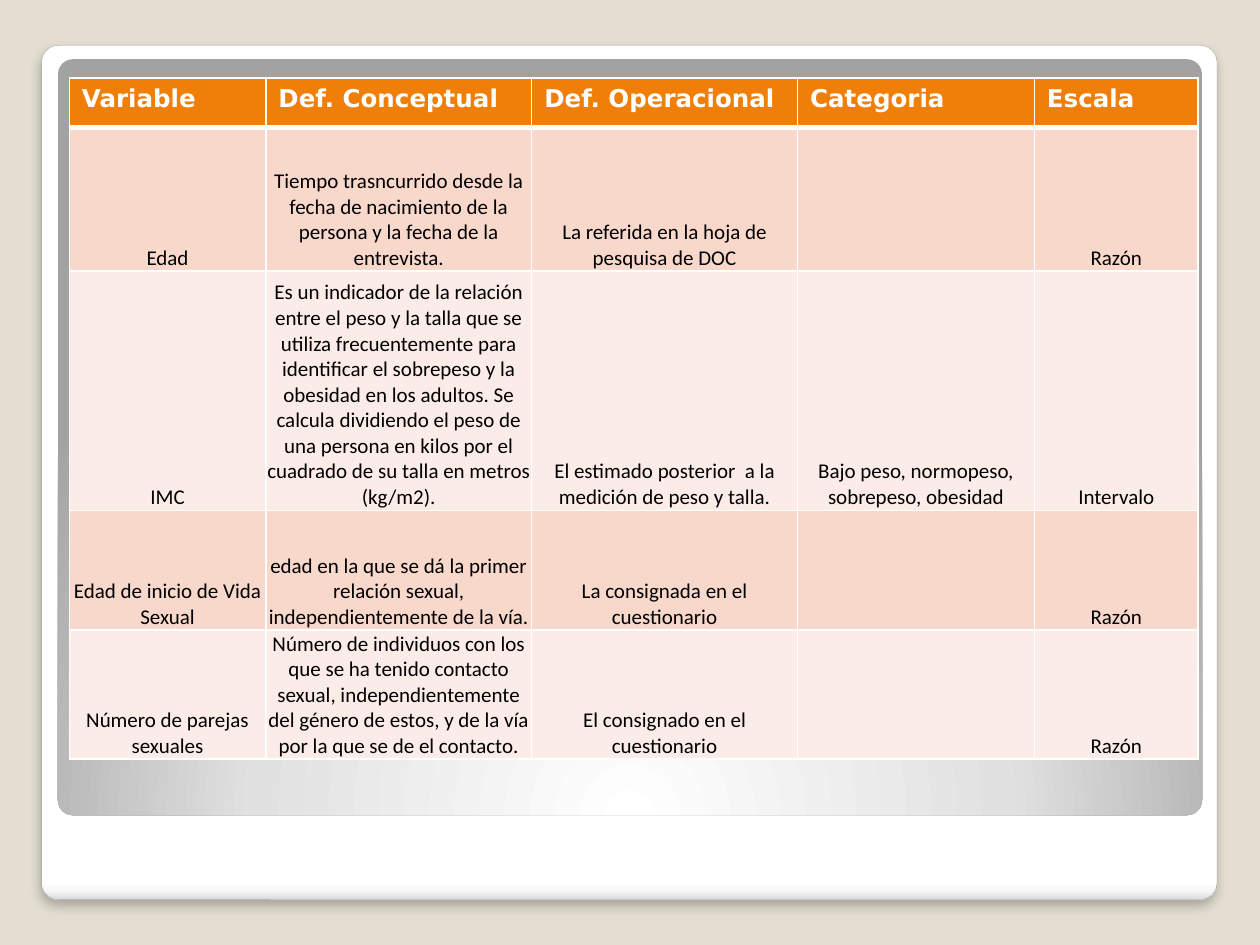
from dataclasses import dataclass

from lxml import etree
from pptx import Presentation
from pptx import util as u
from pptx.dml.color import RGBColor
from pptx.enum import shapes, text
from pptx.oxml import parse_xml
from pptx.oxml.ns import nsdecls, qn

PX = 9144


@dataclass(frozen=True)
class Theme:
    background: str = "E3DED1"
    outline: str = "A4A4A4"
    header: str = "F07F09"
    bands: tuple = ("F9D8CC", "FCECE7")
    white: str = "FFFFFF"
    black: str = "000000"
    header_font: str = "DejaVu Sans"
    body_font: str = "Calibri"
    header_size: int = 14
    body_size: int = 12
    thin: int = 1
    thick: int = 3


THEME = Theme()
CARD_STOPS = [(0, "FFFFFF"), (98, "FFFFFF"), (99, "F7F7F7"), (100, "DADADA")]
PANEL_STOPS = [(0, "FFFFFF"), (55, "E1E1E1"), (100, "A2A2A2")]
LINEAR = '<a:lin ang="5400000" scaled="0"/>'
RADIAL = ('<a:path path="circle"><a:fillToRect l="50000" t="175000" '
          'r="50000" b="-75000"/></a:path>')

COLUMNS = [156, 211, 211, 188, 130]
ROWS = [39, 114, 190, 95, 100]
VARIABLES = [
    ["Variable", "Def. Conceptual", "Def. Operacional", "Categoria", "Escala"],
    ["Edad",
     "Tiempo trasncurrido desde la fecha de nacimiento de la persona y la "
     "fecha de la entrevista.",
     "La referida en la hoja de pesquisa de DOC", "", "Razón"],
    ["IMC",
     "Es un indicador de la relación entre el peso y la talla que se utiliza "
     "frecuentemente para identificar el sobrepeso y la obesidad en los "
     "adultos. Se calcula dividiendo el peso de una persona en kilos por el "
     "cuadrado de su talla en metros (kg/m2).",
     "El estimado posterior  a la medición de peso y talla.",
     "Bajo peso, normopeso, sobrepeso, obesidad", "Intervalo"],
    ["Edad de inicio de Vida Sexual",
     "edad en la que se dá la primer relación sexual, independientemente de "
     "la vía.",
     "La consignada en el cuestionario", "", "Razón"],
    ["Número de parejas sexuales",
     "Número de individuos con los que se ha tenido contacto sexual, "
     "independientemente del género de estos, y de la vía por la que se de "
     "el contacto.",
     "El consignado en el cuestionario", "", "Razón"],
]


def rgb(color):
    return RGBColor.from_string(color)


def emu(box):
    return [n * PX for n in box]


def set_gradient(sp, stops, direction):
    sp.fill.background()
    old = sp._element.spPr.find(qn("a:noFill"))
    marks = "".join(f'<a:gs pos="{pos * 1000}"><a:srgbClr val="{color}"/></a:gs>'
                    for pos, color in stops)
    old.getparent().replace(old, parse_xml(
        f'<a:gradFill {nsdecls("a")} rotWithShape="1"><a:gsLst>{marks}</a:gsLst>'
        f'{direction}</a:gradFill>'))


def add_rounded(slide, box, stops, direction):
    sp = slide.shapes.add_shape(shapes.MSO_SHAPE.ROUNDED_RECTANGLE, *emu(box))
    sp.adjustments[0] = 0.02
    sp.shadow.inherit = False
    set_gradient(sp, stops, direction)
    sp.line.fill.background()
    return sp


def add_card(slide, box):
    sp = add_rounded(slide, box, CARD_STOPS, LINEAR)
    sp.line.color.rgb = rgb(THEME.outline)
    sp.line.width = u.Pt(0.16)
    sp._element.spPr.find(qn("a:effectLst")).append(parse_xml(
        f'<a:outerShdw {nsdecls("a")} blurRad="{u.Pt(6)}" dist="{u.Pt(4)}" '
        f'dir="5400000" algn="t" rotWithShape="0"><a:srgbClr val="{THEME.black}">'
        '<a:alpha val="25000"/></a:srgbClr></a:outerShdw>'))


def add_panel(slide, box):
    add_rounded(slide, box, PANEL_STOPS, RADIAL)


def set_borders(cell, widths):
    tcPr = cell._tc.get_or_add_tcPr()
    for side, width in widths.items():
        ln = etree.SubElement(tcPr, qn(f"a:ln{side}"), w=str(u.Pt(width)))
        fill = etree.SubElement(ln, qn("a:solidFill"))
        etree.SubElement(fill, qn("a:srgbClr"), val=THEME.white)


def format_cell(cell, row):
    header = row == 0
    top = THEME.thick if row == 1 else THEME.thin
    bottom = THEME.thick if header else THEME.thin
    set_borders(cell, {"L": THEME.thin, "R": THEME.thin, "T": top, "B": bottom})
    cell.fill.solid()
    cell.fill.fore_color.rgb = rgb(THEME.header if header
                                   else THEME.bands[(row - 1) % 2])
    p = cell.text_frame.paragraphs[0]
    p.font.name = THEME.header_font if header else THEME.body_font
    p.font.size = u.Pt(THEME.header_size if header else THEME.body_size)
    p.font.bold = header
    p.font.color.rgb = rgb(THEME.white if header else THEME.black)
    if not header:
        p.alignment = text.PP_ALIGN.CENTER
        cell.vertical_anchor = text.MSO_ANCHOR.BOTTOM
        cell.margin_left = cell.margin_right = cell.margin_top = PX
        cell.margin_bottom = 0


def add_variables(slide, box):
    table = slide.shapes.add_table(len(ROWS), len(COLUMNS), *emu(box)).table
    for column, width in zip(table.columns, COLUMNS):
        column.width = width * PX
    for r, (row, height) in enumerate(zip(table.rows, ROWS)):
        row.height = height * PX
        for cell, words in zip(row.cells, VARIABLES[r]):
            cell.text = words
            format_cell(cell, r)


def main():
    prs = Presentation()
    prs.slide_width, prs.slide_height = emu((1000, 750))
    slide = prs.slides.add_slide(prs.slide_layouts[6])
    slide.background.fill.solid()
    slide.background.fill.fore_color.rgb = rgb(THEME.background)
    add_card(slide, (33, 36, 933, 678))
    add_panel(slide, (46, 47, 908, 600))
    add_variables(slide, (55, 62, sum(COLUMNS), sum(ROWS)))
    prs.save("out.pptx")


if __name__ == "__main__":
    main()
